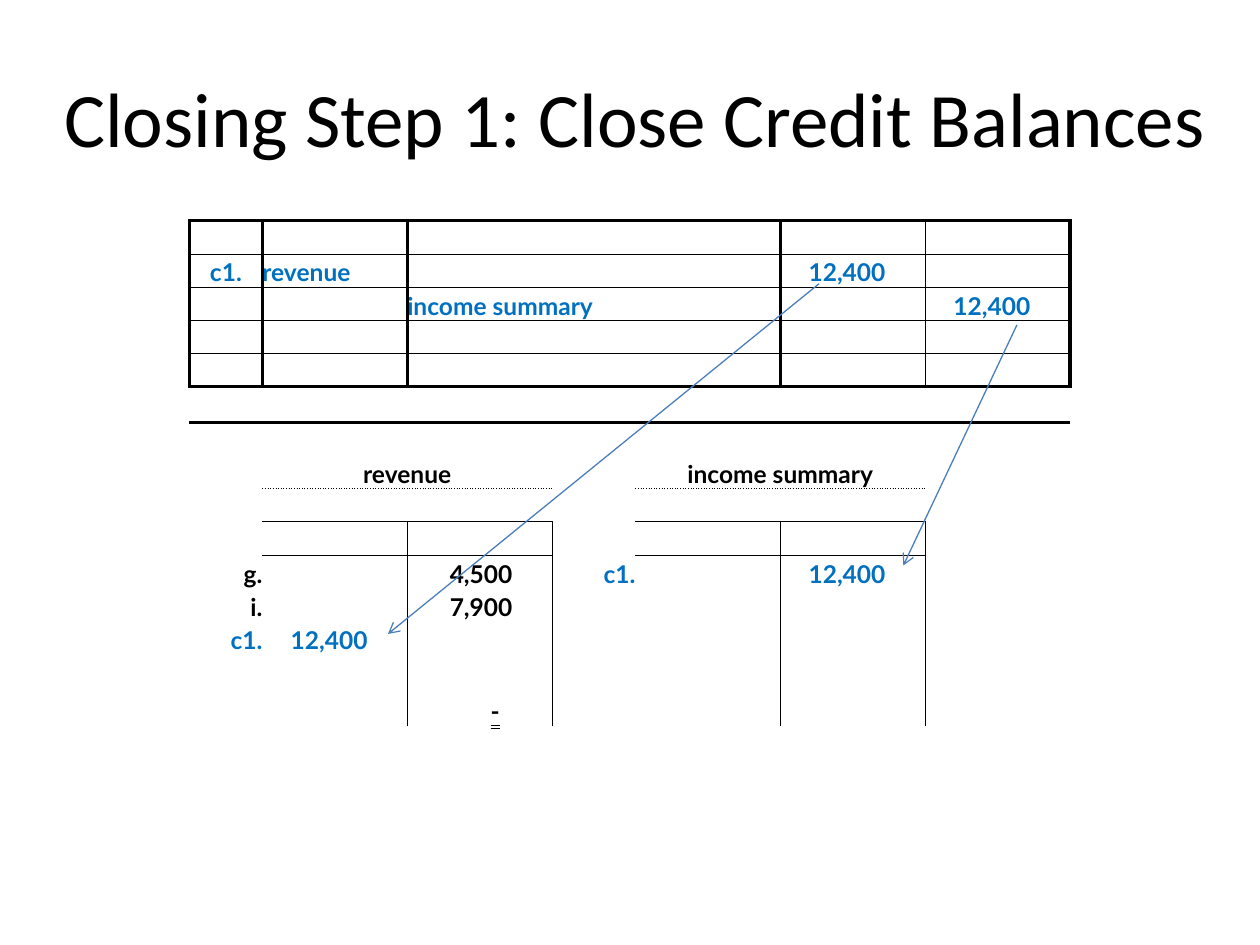
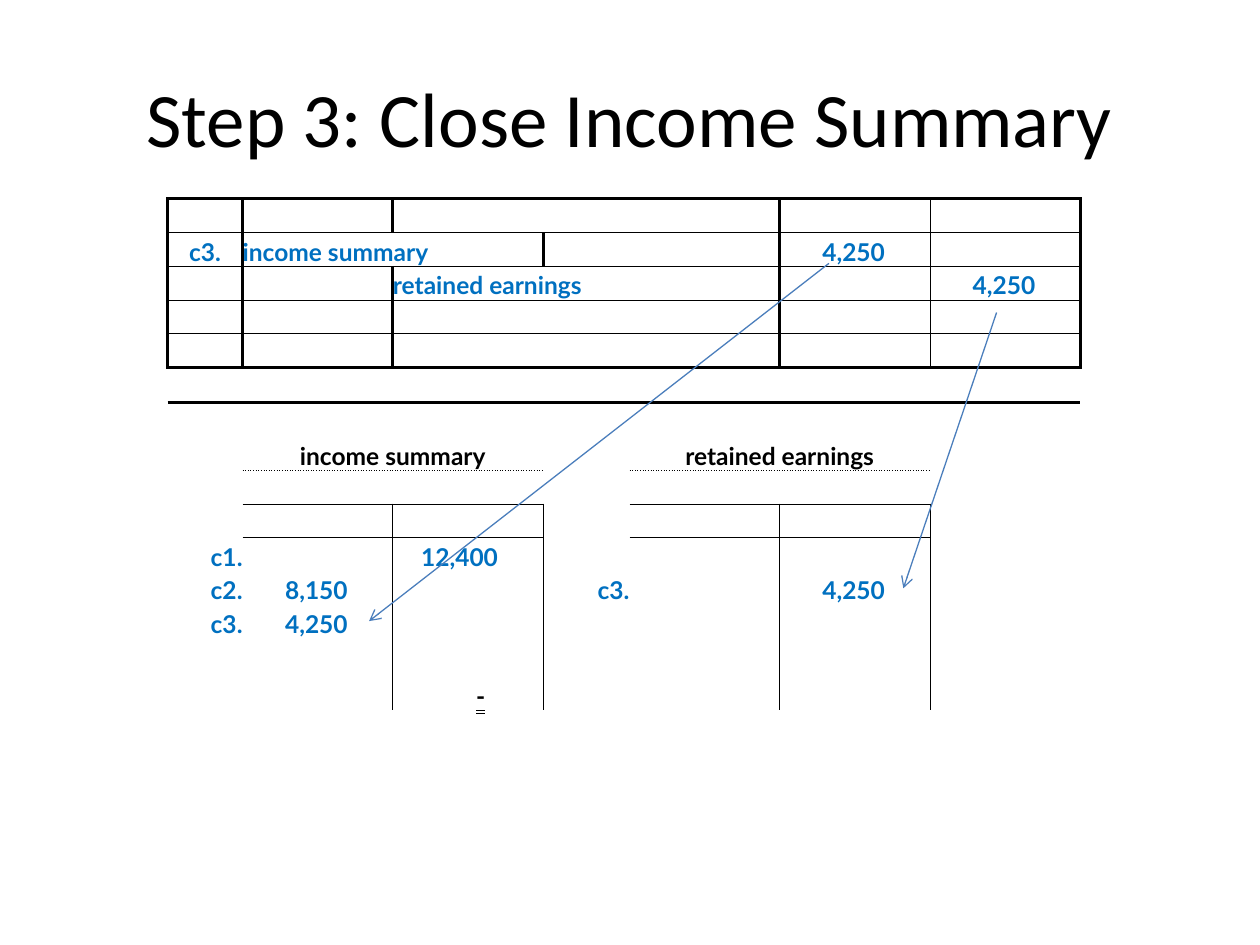
from dataclasses import dataclass
from typing import NamedTuple, Optional

from lxml.etree import SubElement
from pptx import Presentation
from pptx.dml.color import RGBColor
from pptx.enum.shapes import MSO_CONNECTOR
from pptx.enum.text import MSO_ANCHOR, MSO_UNDERLINE, PP_ALIGN
from pptx.oxml.ns import qn
from pptx.util import Cm, Pt

BLACK = "000000"
ENTRY_BLUE = "0070C0"
ARROW_BLUE = "4B7EBC"
NO_GRID_STYLE = "{2D5ABB26-0587-4C30-8999-92F81FD0307C}"
TITLE_ONLY_LAYOUT = 5
JOURNAL_ROWS = 5
ACCOUNT_NAME_ROW = 7
ACCOUNT_FIRST_ROW = 9
BALANCE_ROW = 14
ACCOUNT_COLUMNS = (1, 4)
AMOUNT_RIGHT_EDGE = 2.12
BALANCE_TABS = (1.68, 2.0)


class Border(NamedTuple):
    width: float
    dash: str = "solid"


HEAVY = Border(2)
THIN = Border(0.5)
DOTTED = Border(0.5, "sysDot")
JOURNAL_VERTICALS = {0: HEAVY, 1: HEAVY, 5: HEAVY, 6: THIN, 7: HEAVY}


class Entry(NamedTuple):
    row: int
    column: int
    text: str
    alignment: PP_ALIGN = PP_ALIGN.LEFT
    color: str = ENTRY_BLUE
    span: int = 1
    is_amount: bool = False


class Arrow(NamedTuple):
    start_x: float
    start_y: float
    end_x: float
    end_y: float


@dataclass(frozen=True)
class ClosingStep:
    title: str
    title_left: float
    title_width: float
    left: float
    top: float
    label_width: float
    amount_width: float
    gap_width: float
    row_height: float
    row_count: int
    entries: tuple[Entry, ...]
    arrows: tuple[Arrow, ...]


def label(row: int, column: int, text: str, color: str = ENTRY_BLUE) -> Entry:
    return Entry(row, column, text, PP_ALIGN.RIGHT, color)


def amount(row: int, column: int, text: str, color: str = ENTRY_BLUE) -> Entry:
    return Entry(row, column, text, PP_ALIGN.RIGHT, color, is_amount=True)


def journal(reference: str, debit: str, credit: str, value: str,
            debit_span: int, credit_span: int) -> tuple[Entry, ...]:
    return (
        Entry(1, 0, reference, PP_ALIGN.CENTER),
        Entry(1, 1, debit, span=debit_span),
        amount(1, 5, value),
        Entry(2, 2, credit, span=credit_span),
        amount(2, 6, value),
        *(Entry(ACCOUNT_NAME_ROW, column, name, PP_ALIGN.CENTER, BLACK, span=2)
          for column, name in zip(ACCOUNT_COLUMNS, (debit, credit))),
    )


STEPS = (
    ClosingStep(
        "Closing Step 1: Close Credit Balances", 0.64, 24.33,
        left=3.82, top=4.45, label_width=1.47, amount_width=2.92,
        gap_width=1.68, row_height=0.67, row_count=15,
        entries=(
            *journal("c1.", "revenue", "income summary", "12,400", 1, 2),
            label(10, 0, "g.", BLACK), amount(10, 2, "4,500", BLACK),
            label(10, 3, "c1."), amount(10, 5, "12,400"),
            label(11, 0, "i.", BLACK), amount(11, 2, "7,900", BLACK),
            label(12, 0, "c1."), amount(12, 1, "12,400"),
        ),
        arrows=(Arrow(16.51, 5.72, 7.82, 12.78), Arrow(20.5, 6.55, 18.21, 11.4)),
    ),
    ClosingStep(
        "Step 3: Close Income Summary", 1.27, 22.86,
        left=3.38, top=4.01, label_width=1.51, amount_width=3.03,
        gap_width=1.74, row_height=0.68, row_count=16,
        entries=(
            *journal("c3.", "income summary", "retained earnings", "4,250", 2, 3),
            label(10, 0, "c1."), amount(10, 2, "12,400"),
            label(11, 0, "c2."), amount(11, 1, "8,150"),
            label(11, 3, "c3."), amount(11, 5, "4,250"),
            label(12, 0, "c3."), amount(12, 1, "4,250"),
        ),
        arrows=(Arrow(16.71, 5.31, 7.44, 12.52), Arrow(20.09, 6.3, 18.21, 11.86)),
    ),
)


def rgb(color: str) -> RGBColor:
    return RGBColor.from_string(color)


def write_text(text_frame, text: str, *, size: float = 14, font: str = "Lato",
               color: str = BLACK, bold: bool = True,
               alignment: PP_ALIGN = PP_ALIGN.LEFT,
               underline: Optional[MSO_UNDERLINE] = None) -> None:
    paragraph = text_frame.paragraphs[0]
    paragraph.alignment = alignment
    run = paragraph.add_run()
    run.text = text
    run.font.size = Pt(size)
    run.font.name = font
    run.font.bold = bold
    run.font.underline = underline
    run.font.color.rgb = rgb(color)


def horizontal_border(boundary: int, column: int) -> Optional[Border]:
    if boundary in (0, JOURNAL_ROWS):
        return HEAVY
    if boundary < JOURNAL_ROWS:
        return THIN
    if any(column in (first, first + 1) for first in ACCOUNT_COLUMNS):
        return {ACCOUNT_NAME_ROW + 1: DOTTED, ACCOUNT_FIRST_ROW: THIN}.get(boundary)
    return None


def vertical_border(row: int, boundary: int) -> Optional[Border]:
    if row < JOURNAL_ROWS:
        return JOURNAL_VERTICALS.get(boundary)
    in_account = ACCOUNT_FIRST_ROW <= row <= BALANCE_ROW
    middles = [first + 1 for first in ACCOUNT_COLUMNS]
    return THIN if in_account and boundary in middles else None


def format_cell(cell, row: int, column: int) -> None:
    cell.margin_left = cell.margin_right = cell.margin_top = cell.margin_bottom = 0
    cell.vertical_anchor = MSO_ANCHOR.BOTTOM
    properties = cell._tc.get_or_add_tcPr()
    borders = {
        "a:lnL": vertical_border(row, column),
        "a:lnR": vertical_border(row, column + 1),
        "a:lnT": horizontal_border(row, column),
        "a:lnB": horizontal_border(row + 1, column),
    }
    for tag, border in borders.items():
        if border:
            line = SubElement(properties, qn(tag), w=str(Pt(border.width)))
            fill = SubElement(line, qn("a:solidFill"))
            SubElement(fill, qn("a:srgbClr"), val=BLACK)
            SubElement(line, qn("a:prstDash"), val=border.dash)
    cell.fill.background()
    SubElement(cell.text_frame.paragraphs[0]._p, qn("a:endParaRPr"), sz="1400")


def write_balance(cell) -> None:
    write_text(cell.text_frame, "\t-\t", underline=MSO_UNDERLINE.DOUBLE_LINE)
    properties = cell.text_frame.paragraphs[0]._p.get_or_add_pPr()
    tabs = SubElement(properties, qn("a:tabLst"))
    for position in BALANCE_TABS:
        SubElement(tabs, qn("a:tab"), pos=str(Cm(position)), algn="l")


def add_ledger(slide, step: ClosingStep) -> None:
    widths = [step.label_width, step.amount_width, step.amount_width,
              step.gap_width, *[step.amount_width] * 3]
    heights = [step.row_height] * step.row_count
    heights[JOURNAL_ROWS] = 0.71
    heights[BALANCE_ROW] = 0.76
    table = slide.shapes.add_table(
        len(heights), len(widths), Cm(step.left), Cm(step.top),
        Cm(sum(widths)), Cm(sum(heights))).table
    table.first_row = table.horz_banding = False
    table._tbl.tblPr.find(qn("a:tableStyleId")).text = NO_GRID_STYLE
    for column, width in zip(table.columns, widths):
        column.width = Cm(width)
    for row_index, height in enumerate(heights):
        table.rows[row_index].height = Cm(height)
        for column_index in range(len(widths)):
            format_cell(table.cell(row_index, column_index), row_index, column_index)
    for entry in step.entries:
        cell = table.cell(entry.row, entry.column)
        if entry.span > 1:
            cell.merge(table.cell(entry.row, entry.column + entry.span - 1))
        if entry.is_amount:
            cell.margin_right = Cm(step.amount_width - AMOUNT_RIGHT_EDGE)
        write_text(cell.text_frame, entry.text, color=entry.color,
                   alignment=entry.alignment)
    write_balance(table.cell(BALANCE_ROW, 2))


def add_arrow(slide, arrow: Arrow) -> None:
    connector = slide.shapes.add_connector(
        MSO_CONNECTOR.STRAIGHT, *(Cm(length) for length in arrow))
    connector.line.color.rgb = rgb(ARROW_BLUE)
    connector.line.width = Pt(0.75)
    SubElement(connector.line._get_or_add_ln(), qn("a:tailEnd"), type="arrow")
    SubElement(connector._element.spPr, qn("a:effectLst"))


def add_step_slide(presentation, step: ClosingStep) -> None:
    slide = presentation.slides.add_slide(presentation.slide_layouts[TITLE_ONLY_LAYOUT])
    title = slide.shapes.title
    title.left, title.top = Cm(step.title_left), Cm(0.76)
    title.width, title.height = Cm(step.title_width), Cm(3.18)
    title.text_frame.vertical_anchor = MSO_ANCHOR.MIDDLE
    write_text(title.text_frame, step.title, size=44, font="Calibri", bold=False,
               alignment=PP_ALIGN.CENTER)
    add_ledger(slide, step)
    for arrow in step.arrows:
        add_arrow(slide, arrow)


def main() -> None:
    presentation = Presentation()
    presentation.slide_width, presentation.slide_height = Cm(25.4), Cm(19.05)
    for step in STEPS:
        add_step_slide(presentation, step)
    presentation.save("out.pptx")


if __name__ == "__main__":
    main()
